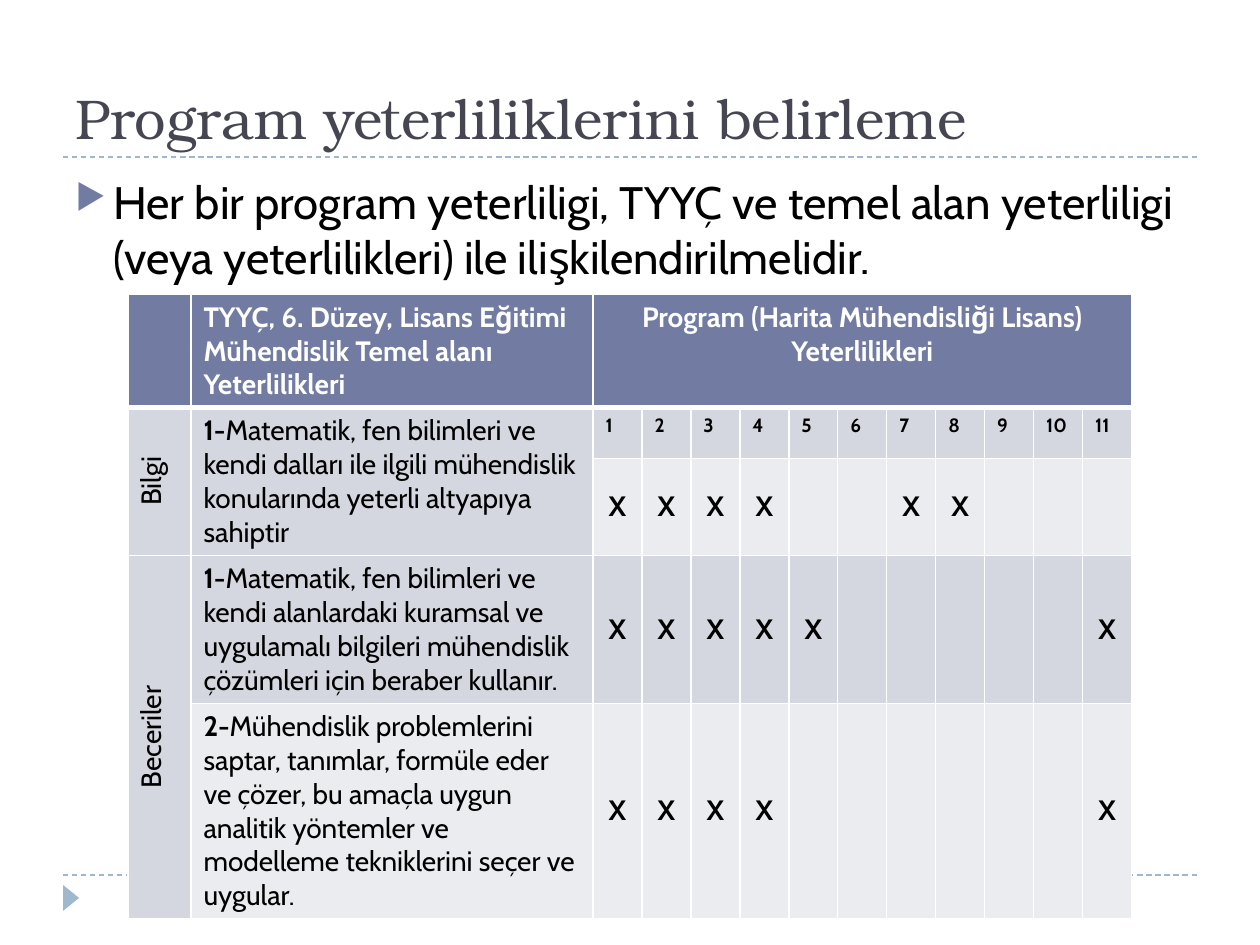
from lxml import etree
from pptx import Presentation
from pptx import util as u
from pptx.dml.color import RGBColor
from pptx.enum import dml, shapes, text
from pptx.oxml import parse_xml
from pptx.oxml.ns import nsdecls, qn

PX = 914400 / 126
HUES = {"ink": "464653", "black": "000000", "white": "FFFFFF", "head": "727CA3",
        "dark": "D5D7E0", "pale": "EBECF0", "rule": "9FB8CD"}
SERIF, SANS = "TeX Gyre Bonum", "Cabin"
COLS = [63, 402] + [49] * 11
ROWS = [113, 51, 97, 148, 215]
FILLS = ["head", "dark", "pale", "dark", "pale"]
MERGES = [(0, 2, 0, 12), (1, 0, 2, 0), (1, 1, 2, 1), (3, 0, 4, 0)]
HEADS = [(1, ["TYYÇ, 6. Düzey, Lisans Eğitimi", "Mühendislik Temel alanı Yeterlilikleri"], "l"),
         (2, ["Program (Harita Mühendisliği Lisans) Yeterlilikleri"], "ctr")]
GROUPS = {1: "Bilgi", 3: "Beceriler"}
GOALS = {
    1: ("1-", "Matematik, fen bilimleri ve kendi dalları ile ilgili mühendislik "
        "konularında yeterli altyapıya sahiptir"),
    3: ("1-", "Matematik, fen bilimleri ve kendi alanlardaki kuramsal ve uygulamalı "
        "bilgileri mühendislik çözümleri için beraber kullanır."),
    4: ("2-", "Mühendislik problemlerini saptar, tanımlar, formüle eder ve çözer, bu amaçla "
        "uygun analitik yöntemler ve modelleme tekniklerini seçer ve uygular."),
}
MARKS = {2: [1, 2, 3, 4, 7, 8], 3: [1, 2, 3, 4, 5, 11], 4: [1, 2, 3, 4, 11]}
ALIGNS = {"l": text.PP_ALIGN.LEFT, "ctr": text.PP_ALIGN.CENTER}


def px(num):
    """Turn pixels into EMU."""
    return u.Emu(round(num * PX))


def hue(name):
    """Look up a colour by name."""
    return RGBColor.from_string(HUES[name])


def write(frame, *lines, lead="", size=16, font=SANS, color="black", bold=False, align="l"):
    """Fill a text frame with lines, the first after an optional bold lead."""
    frame.word_wrap = True
    for i, line in enumerate(lines):
        para = frame.add_paragraph() if i else frame.paragraphs[0]
        para.alignment = ALIGNS[align]
        parts = [(lead, True)] if lead and not i else []
        for words, heavy in parts + [(line, bold)]:
            run = para.add_run()
            run.text = words
            run.font.size = u.Pt(size)
            run.font.name = font
            run.font.bold = heavy
            run.font.color.rgb = hue(color)


def rule(slide, x, y, w):
    """Draw a dashed level line."""
    line = slide.shapes.add_connector(
        shapes.MSO_CONNECTOR.STRAIGHT, px(x), px(y), px(x + w), px(y))
    line.line.color.rgb = hue("rule")
    line.line.width = u.Pt(0.75)
    line.line.dash_style = dml.MSO_LINE.DASH
    etree.SubElement(line._element.spPr, qn("a:effectLst"))


def frame(slide, x, y, w, h):
    """Draw both rules and the corner arrow."""
    rule(slide, x, y, w)
    rule(slide, x, y + h, w)
    tip = slide.shapes.add_shape(
        shapes.MSO_SHAPE.ISOSCELES_TRIANGLE, px(x - 5), px(y + h + 15), px(26), px(16))
    tip.rotation = 90
    tip.shadow.inherit = False
    tip.fill.solid()
    tip.fill.fore_color.rgb = hue("rule")
    tip.line.fill.background()


def title(slide, x, y, w, h):
    """Place and format the title."""
    box = slide.shapes.title
    box.left, box.top, box.width, box.height = map(px, (x, y, w, h))
    box.text_frame.auto_size = text.MSO_AUTO_SIZE.NONE
    box.text_frame.vertical_anchor = text.MSO_ANCHOR.BOTTOM
    write(box.text_frame, "Program yeterliliklerini belirleme",
          size=32, font=SERIF, color="ink")


def body(slide, x, y, w, h):
    """Place the bulleted statement."""
    box = slide.shapes.add_textbox(*map(px, (x, y, w, h)))
    write(box.text_frame, "Her bir program yeterliligi, TYYÇ ve temel alan yeterliligi "
          "(veya yeterlilikleri) ile ilişkilendirilmelidir.", size=26)
    para = box.text_frame.paragraphs[0]
    para.space_before = u.Pt(6)
    props = para._p.get_or_add_pPr()
    props.set("marL", str(px(38)))
    props.set("indent", str(px(-38)))
    for xml in (f'<a:buClr {nsdecls("a")}><a:srgbClr val="{HUES["head"]}"/></a:buClr>',
                f'<a:buSzPct {nsdecls("a")} val="76000"/>',
                f'<a:buChar {nsdecls("a")} char="▶"/>'):
        props.append(parse_xml(xml))


def style(cell, row):
    """Give a cell its white borders and its row's fill."""
    props = cell._tc.get_or_add_tcPr()
    for side in "LRTB":
        thick = (row, side) in [(0, "B"), (1, "T")]
        props.append(parse_xml(
            f'<a:ln{side} {nsdecls("a")} w="{u.Pt(3 if thick else 1)}"><a:solidFill>'
            f'<a:srgbClr val="{HUES["white"]}"/></a:solidFill></a:ln{side}>'))
    cell.fill.solid()
    cell.fill.fore_color.rgb = hue(FILLS[row])


def matrix(slide, x, y):
    """Build the table that maps goals to programme outcomes."""
    grid = slide.shapes.add_table(
        len(ROWS), len(COLS), px(x), px(y), px(sum(COLS)), px(sum(ROWS))).table
    for col, wide in zip(grid.columns, COLS):
        col.width = px(wide)
    for i, (row, tall) in enumerate(zip(grid.rows, ROWS)):
        row.height = px(tall)
        for cell in row.cells:
            style(cell, i)
    for top, left, low, right in MERGES:
        grid.cell(top, left).merge(grid.cell(low, right))
    for col, lines, align in HEADS:
        write(grid.cell(0, col).text_frame, *lines, color="white", bold=True, align=align)
    for row, name in GROUPS.items():
        cell = grid.cell(row, 0)
        cell.vertical_anchor = text.MSO_ANCHOR.MIDDLE
        cell._tc.get_or_add_tcPr().set("vert", "vert270")
        write(cell.text_frame, name, align="ctr")
    for row, (lead, goal) in GOALS.items():
        write(grid.cell(row, 1).text_frame, goal, lead=lead)
    for num in range(1, 12):
        write(grid.cell(1, num + 1).text_frame, str(num), size=11, bold=True)
    for row, nums in MARKS.items():
        for num in nums:
            cell = grid.cell(row, num + 1)
            cell.vertical_anchor = text.MSO_ANCHOR.MIDDLE
            write(cell.text_frame, "X", bold=True, align="ctr")


def main():
    """Build and save the slide."""
    deck = Presentation()
    deck.slide_width, deck.slide_height = px(1260), px(945)
    slide = deck.slides.add_slide(deck.slide_layouts[5])
    frame(slide, 63, 157, 1134, 718)
    title(slide, 63, 21, 1134, 136)
    body(slide, 63, 168, 1134, 680)
    matrix(slide, 128, 294)
    deck.save("out.pptx")


if __name__ == "__main__":
    main()
